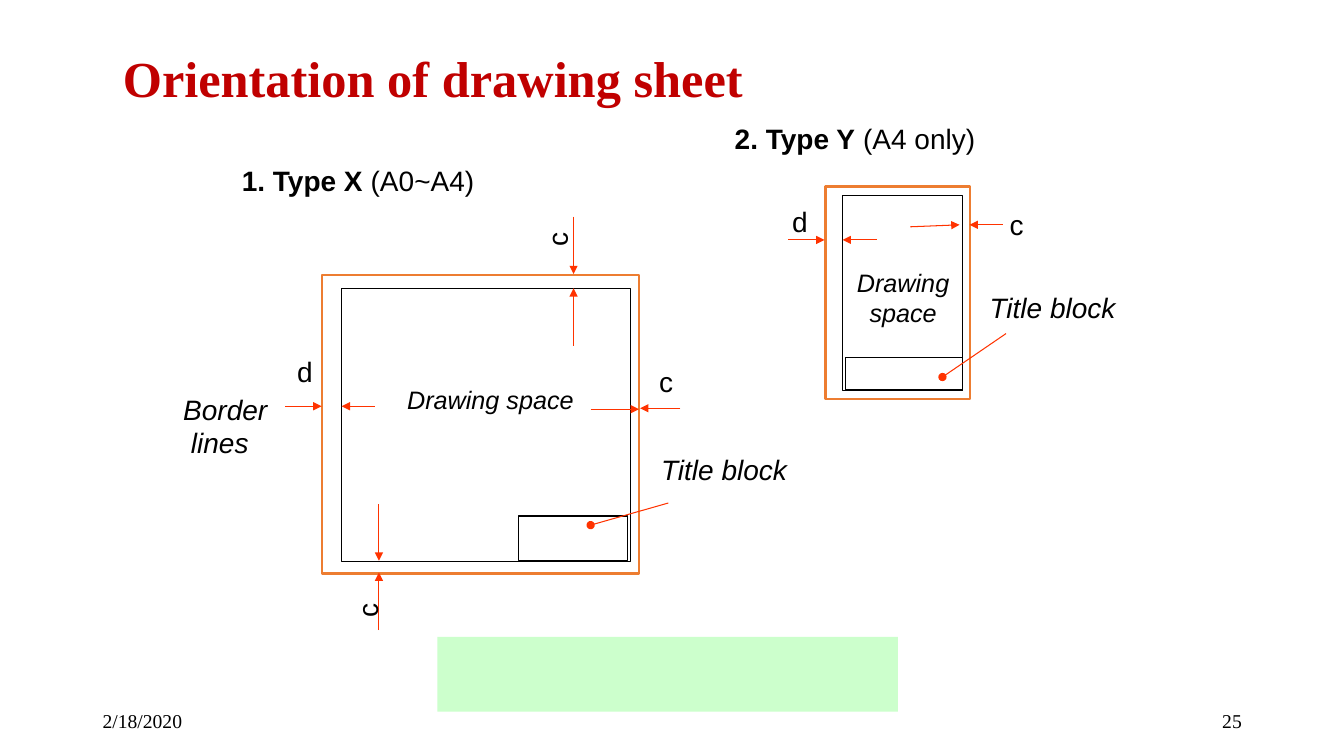
from dataclasses import dataclass

from lxml.etree import SubElement
from pptx import Presentation
from pptx.dml.color import RGBColor
from pptx.enum.shapes import MSO_CONNECTOR, MSO_SHAPE
from pptx.enum.text import MSO_ANCHOR, MSO_AUTO_SIZE, PP_ALIGN
from pptx.oxml.ns import qn
from pptx.util import Pt


@dataclass(frozen=True)
class Theme:
    ink: RGBColor = RGBColor.from_string("000000")
    heading: RGBColor = RGBColor.from_string("C00000")
    sheet_edge: RGBColor = RGBColor.from_string("ED7D31")
    dimension: RGBColor = RGBColor.from_string("FF3300")
    note: RGBColor = RGBColor.from_string("CCFFCC")
    serif: str = "Times New Roman"
    sans: str = "Arial"
    title_size: int = 36
    label_size: int = 20
    space_size: int = 18
    footer_size: int = 14


theme = Theme()


def write(box, text, bold_lead="", font=theme.sans, size=theme.label_size, color=theme.ink,
          bold=False, italic=False, align=PP_ALIGN.LEFT, anchor=MSO_ANCHOR.TOP, wrap=False):
    frame = box.text_frame
    frame.auto_size = MSO_AUTO_SIZE.NONE
    frame.word_wrap = wrap
    frame.vertical_anchor = anchor
    for index, line in enumerate(text.split("\n")):
        para = frame.paragraphs[0] if index == 0 else frame.add_paragraph()
        para.alignment = align
        parts = [(bold_lead, True), (line, bold)] if bold_lead else [(line, bold)]
        for words, heavy in parts:
            span = para.add_run()
            span.text = words
            span.font.name = font
            span.font.size = Pt(size)
            span.font.color.rgb = color
            span.font.bold = heavy
            span.font.italic = italic


deck = Presentation()
deck.slide_width, deck.slide_height = Pt(960), Pt(540)
page = deck.slides.add_slide(deck.slide_layouts[5])

title = page.shapes.title
title.left, title.top, title.width, title.height = Pt(80.6), Pt(30), Pt(548), Pt(72)
write(title, "Orientation of drawing sheet", font=theme.serif, size=theme.title_size,
      color=theme.heading, bold=True, wrap=True)

rectangles = [
    (312.5, 455, 329, 53.3, theme.note, None, 0),
    (601.9, 139.7, 85.7, 139, None, theme.ink, 0.75),
    (589.7, 133.2, 103, 151.9, None, theme.sheet_edge, 1.5),
    (604.1, 255.6, 83.5, 23, None, theme.ink, 0.75),
    (244.1, 205.9, 206.6, 195.1, None, theme.ink, 0.75),
    (229.7, 196.6, 226.8, 213.1, None, theme.sheet_edge, 1.5),
    (370.1, 368.6, 78.5, 31.7, None, theme.ink, 0.75),
]
for left, top, width, height, fill, edge, weight in rectangles:
    box = page.shapes.add_shape(MSO_SHAPE.RECTANGLE, Pt(left), Pt(top), Pt(width), Pt(height))
    box.shadow.inherit = False
    if fill:
        box.fill.solid()
        box.fill.fore_color.rgb = fill
    else:
        box.fill.background()
    if edge:
        box.line.color.rgb = edge
        box.line.width = Pt(weight)
    else:
        box.line.fill.background()

dimension_lines = [
    (563, 171.4, 589, 171.4, "triangle"),
    (626.4, 171.4, 601.9, 171.4, "triangle"),
    (650.2, 162, 685.4, 160.6, "triangle"),
    (716.4, 160.6, 692.6, 160.6, "triangle"),
    (203.8, 290.2, 229.7, 290.2, "triangle"),
    (267.8, 290.2, 244.1, 290.2, "triangle"),
    (421.9, 292.3, 456.5, 292.3, "triangle"),
    (486, 291.6, 457.2, 291.6, "triangle"),
    (270.7, 360, 270.7, 400.5, "triangle"),
    (270.7, 450, 270.7, 409, "triangle"),
    (409.7, 154.8, 409.7, 195.8, "triangle"),
    (409.7, 247, 409.7, 205.9, "triangle"),
    (718.6, 238.3, 673.2, 269.3, "oval"),
    (477.4, 359.3, 421.9, 375.1, "oval"),
]
for start_x, start_y, end_x, end_y, head in dimension_lines:
    line = page.shapes.add_connector(
        MSO_CONNECTOR.STRAIGHT, Pt(start_x), Pt(start_y), Pt(end_x), Pt(end_y))
    line.line.color.rgb = theme.dimension
    line.line.width = Pt(0.75)
    SubElement(line.line._get_or_add_ln(), qn("a:tailEnd"), type=head)
    SubElement(line._element.spPr, qn("a:effectLst"))

centred = {"align": PP_ALIGN.CENTER}
slanted = {"italic": True}
space = {"italic": True, "size": theme.space_size}
footer = {"font": theme.serif, "size": theme.footer_size, "anchor": MSO_ANCHOR.MIDDLE,
          "wrap": True}
labels = [
    (165.6, 113, 181.4, 43.9, 0, " (A0~A4)", {"bold_lead": "1. Type X"}),
    (517.7, 83.5, 187.9, 31, 0, " (A4 only)", {"bold_lead": "2. Type Y"}),
    (283.7, 270.7, 133.2, 41, 0, "Drawing space", space),
    (604.8, 187.2, 80.6, 50.4, 0, "Drawing\nspace", space | centred),
    (465.1, 319.7, 104.4, 43.9, 0, "Title block", slanted),
    (699.8, 203.8, 104.4, 31, 0, "Title block", slanted),
    (123.8, 276.5, 74.2, 77.8, 0, "Border\n lines", slanted),
    (205.2, 250, 24.5, 43.9, 0, "d", {}),
    (558.7, 142.6, 24.5, 31, 0, "d", {}),
    (463.7, 256.5, 24.5, 43.9, 0, "c", {}),
    (714.2, 144.7, 24.5, 31, 0, "c", {}),
    (244.8, 420.5, 34.6, 31, 270, "c", centred),
    (380.2, 155.5, 34.6, 31, 270, "c", centred),
    (66.2, 500.4, 216, 28.8, 0, "2/18/2020", footer),
    (678.2, 500.4, 216, 28.8, 0, "25", footer | {"align": PP_ALIGN.RIGHT}),
]
for left, top, width, height, turn, text, style in labels:
    box = page.shapes.add_textbox(Pt(left), Pt(top), Pt(width), Pt(height))
    box.rotation = turn
    write(box, text, **style)

deck.save("out.pptx")
